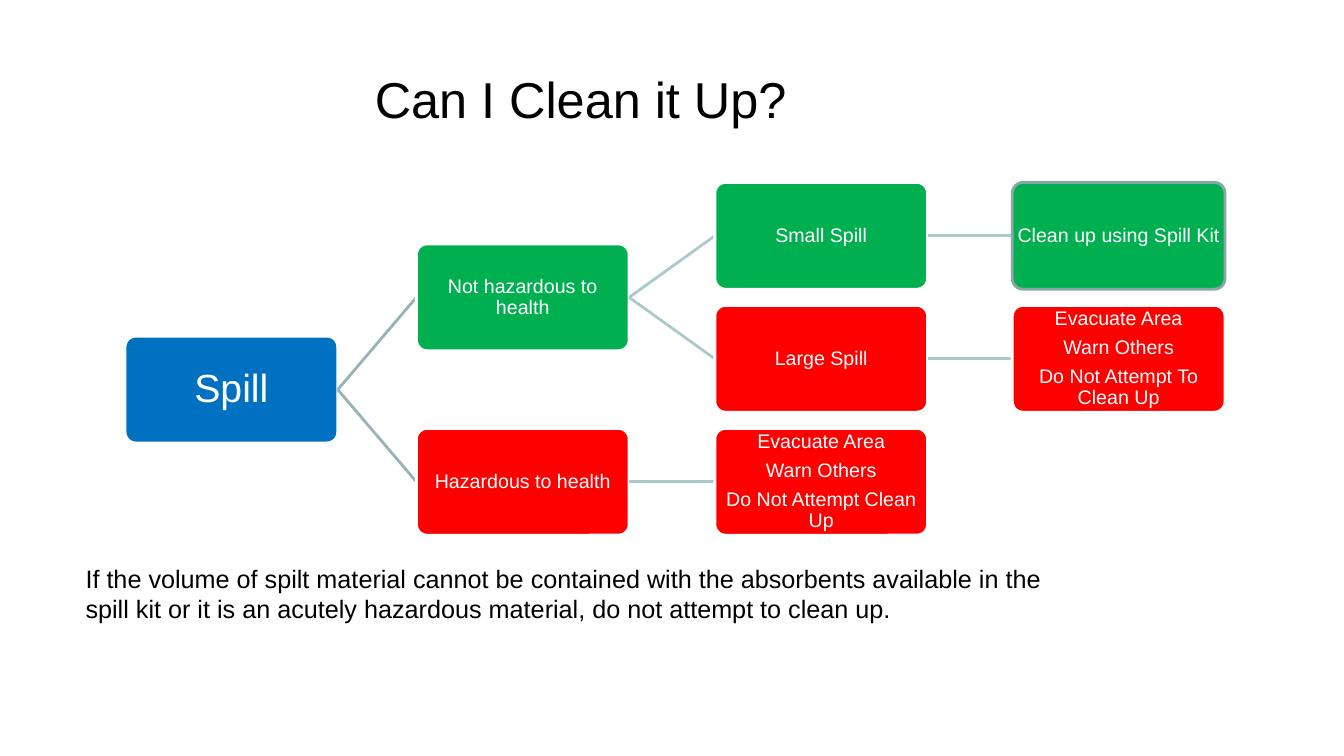
import pptx
import pptx.dml.color
import pptx.enum.shapes
import pptx.enum.text
import pptx.oxml.ns
import pptx.util
from lxml import etree

Inches = pptx.util.Inches
Pt = pptx.util.Pt
RGBColor = pptx.dml.color.RGBColor
Align = pptx.enum.text.PP_ALIGN

BLUE = RGBColor(0x00, 0x70, 0xC0)
GREEN = RGBColor(0x00, 0xB0, 0x50)
RED = RGBColor(0xFF, 0x00, 0x00)
WHITE = RGBColor(0xFF, 0xFF, 0xFF)
BLACK = RGBColor(0x00, 0x00, 0x00)
GREY = RGBColor(0x8A, 0xA6, 0xA8)
FIRST_BRANCH = RGBColor(0x96, 0xB3, 0xB6)
LATER_BRANCH = RGBColor(0xAA, 0xCB, 0xCE)

COLUMN_LEFTS = (1.24, 4.13, 7.09, 10.04)
TREE_TOP = 1.81
ROW_PITCH = 1.22
BOX_WIDTH = 2.11
BOX_HEIGHT = 1.06

DECISION_TREE = {
    "lines": ["Spill"], "fill": BLUE, "size": 28, "children": [
        {"lines": ["Not hazardous to health"], "fill": GREEN, "children": [
            {"lines": ["Small Spill"], "fill": GREEN, "children": [
                {"lines": ["Clean up using Spill Kit"], "fill": GREEN, "border": GREY, "row": 0},
            ]},
            {"lines": ["Large Spill"], "fill": RED, "children": [
                {"lines": ["Evacuate Area", "Warn Others", "Do Not Attempt To Clean Up"],
                 "fill": RED, "row": 1},
            ]},
        ]},
        {"lines": ["Hazardous to health"], "fill": RED, "children": [
            {"lines": ["Evacuate Area", "Warn Others", "Do Not Attempt Clean Up"],
             "fill": RED, "row": 2},
        ]},
    ],
}


def write_text(frame, lines, *, size, color, align=Align.LEFT, spacing=None, after=None):
    """Fill a text frame with one paragraph for each line."""
    frame.word_wrap = True
    for index, line in enumerate(lines):
        para = frame.paragraphs[0] if index == 0 else frame.add_paragraph()
        para.alignment = align
        para.line_spacing = spacing
        para.space_after = after
        span = para.add_run()
        span.text = line
        span.font.name = "Arial"
        span.font.size = Pt(size)
        span.font.color.rgb = color


def row_of(node):
    """A leaf has its own row; a parent sits midway between its children."""
    if "row" in node:
        return node["row"]
    rows = [row_of(child) for child in node["children"]]
    return sum(rows) / len(rows)


class SpillPage:
    line_width = Pt(2)
    corner = 0.1
    inset = Inches(0.01)

    def __init__(self, page):
        self.page = page

    def caption(self, text, left, top, width, height, **style):
        box = self.page.shapes.add_textbox(
            Inches(left), Inches(top), Inches(width), Inches(height))
        box.text_frame.auto_size = pptx.enum.text.MSO_AUTO_SIZE.SHAPE_TO_FIT_TEXT
        write_text(box.text_frame, [text], color=BLACK, **style)

    def node_box(self, node, depth):
        box = self.page.shapes.add_shape(
            pptx.enum.shapes.MSO_SHAPE.ROUNDED_RECTANGLE,
            Inches(COLUMN_LEFTS[depth]), Inches(TREE_TOP + row_of(node) * ROW_PITCH),
            Inches(BOX_WIDTH), Inches(BOX_HEIGHT))
        box.adjustments[0] = self.corner
        box.shadow.inherit = False
        box.fill.solid()
        box.fill.fore_color.rgb = node["fill"]
        box.line.color.rgb = node.get("border", WHITE)
        box.line.width = self.line_width
        frame = box.text_frame
        frame.margin_left = frame.margin_right = self.inset
        frame.margin_top = frame.margin_bottom = self.inset
        frame.vertical_anchor = pptx.enum.text.MSO_ANCHOR.MIDDLE
        write_text(frame, node["lines"], size=node.get("size", 14), color=WHITE,
                   align=Align.CENTER, spacing=0.9, after=Pt(5.5))
        return box

    def branch(self, parent, child, color):
        """Join two boxes, with the line behind the child's border."""
        line = self.page.shapes.add_connector(
            pptx.enum.shapes.MSO_CONNECTOR.STRAIGHT, 0, 0, 0, 0)
        line.begin_connect(parent, 3)
        line.end_connect(child, 1)
        line.line.color.rgb = color
        line.line.width = self.line_width
        etree.SubElement(line._element.spPr, pptx.oxml.ns.qn("a:effectLst"))
        child._element.addprevious(line._element)

    def tree(self, node, depth=0, parent=None):
        box = self.node_box(node, depth)
        if parent is not None:
            self.branch(parent, box, FIRST_BRANCH if depth == 1 else LATER_BRANCH)
        for child in node.get("children", []):
            self.tree(child, depth + 1, box)


def main():
    deck = pptx.Presentation()
    deck.slide_width = Inches(13.33)
    deck.slide_height = Inches(7.5)
    spill_page = SpillPage(deck.slides.add_slide(deck.slide_layouts[6]))
    spill_page.tree(DECISION_TREE)
    spill_page.caption(
        "If the volume of spilt material cannot be contained with the absorbents available "
        "in the spill kit or it is an acutely hazardous material, do not attempt to clean up.",
        0.75, 5.54, 10.01, 0.71, size=18)
    spill_page.caption("Can I Clean it Up?", 2.4, 0.63, 6.72, 0.71, size=36, align=Align.CENTER)
    deck.save("out.pptx")


if __name__ == "__main__":
    main()
